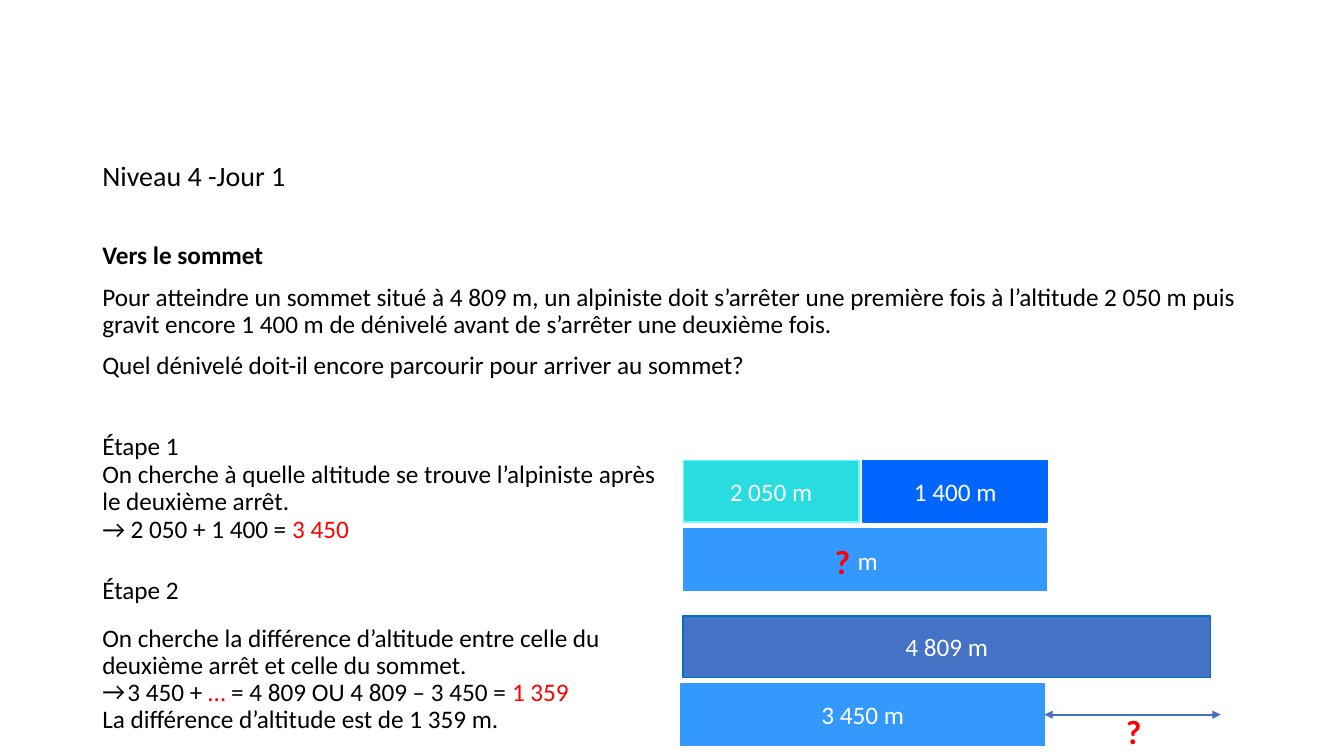
from lxml import etree
from pptx import Presentation
from pptx.dml.color import RGBColor
from pptx.enum.shapes import MSO_CONNECTOR as Connector, MSO_SHAPE as Shape
from pptx.enum.text import MSO_ANCHOR as Anchor, PP_ALIGN as Align
from pptx.oxml.ns import qn
from pptx.util import Pt

COLORS = {
    "black": "000000", "white": "FFFFFF", "red": "FF0000",
    "turquoise": "28DCE0", "aqua": "66FFFF", "royal": "0066FF",
    "sky": "3399FF", "slate": "4472C4", "ocean": "0070C0",
}


def color(name):
    return RGBColor.from_string(COLORS[name])


def add_run(paragraph, text, size=18, ink="black", bold=False):
    run = paragraph.add_run()
    run.text = text
    run.font.name = "Calibri"
    run.font.size = Pt(size)
    run.font.bold = bold
    run.font.color.rgb = color(ink)


prs = Presentation()
prs.slide_width, prs.slide_height = Pt(960), Pt(540)
slide = prs.slides.add_slide(prs.slide_layouts[6])

# Problem and solution: (space before, size, bold, runs)
STEP_GAP = 58.5  # leaves room for a step heading
problem = [
    (0, 20, False, [("Niveau 4 -Jour 1", "black")]),
    (36, 18, True, [("Vers le sommet", "black")]),
    (10, 18, False, [("Pour atteindre un sommet situé à 4 809 m, un alpiniste doit "
                      "s’arrêter une première fois à l’altitude 2 050 m puis gravit "
                      "encore 1 400 m de dénivelé avant de s’arrêter une deuxième "
                      "fois.", "black")]),
    (10, 18, False, [("Quel dénivelé doit-il encore parcourir pour arriver au "
                      "sommet?", "black")]),
    (STEP_GAP, 18, False, [("On cherche à quelle altitude se trouve l’alpiniste "
                            "après", "black")]),
    (0, 18, False, [("le deuxième arrêt.", "black")]),
    (0, 18, False, [("→ 2 050 + 1 400 = ", "black"), ("3 450", "red")]),
    (STEP_GAP, 18, False, [("On cherche la différence d’altitude entre celle du",
                            "black")]),
    (0, 18, False, [("deuxième arrêt et celle du sommet.", "black")]),
    (0, 18, False, [("3 450 + ", "black"), ("…", "red"),
                    (" = 4 809 OU 4 809 – 3 450 = ", "black"), ("1 359", "red")]),
    (0, 18, False, [("La différence d’altitude est de 1 359 m.", "black")]),
]
statement = slide.shapes.add_textbox(Pt(66), Pt(112.5), Pt(828), Pt(427.5)).text_frame
statement.word_wrap = True
for index, (before, size, bold, runs) in enumerate(problem):
    line = statement.paragraphs[0] if index == 0 else statement.add_paragraph()
    line.line_spacing = 0.9
    line.space_before = Pt(before)
    for text, ink in runs:
        add_run(line, text, size, ink, bold)

# Arrow bullet on the second calculation
calculation = statement.paragraphs[9]._p.get_or_add_pPr()
calculation.set("marL", str(Pt(18)))
calculation.set("indent", str(-Pt(18)))
etree.SubElement(calculation, qn("a:buFont"), typeface="Calibri")
etree.SubElement(calculation, qn("a:buChar"), char="→")

# Bar model: left, top, width, fill, outline, value
bars = [
    (488, 329, 125.5, "turquoise", "aqua", "2 050 m"),
    (616.5, 329, 131.5, "royal", "royal", "1 400 m"),
    (488, 378, 259.5, "sky", "sky", " m"),
    (488, 440, 376.5, "slate", "ocean", "4 809 m"),
    (486.5, 488.5, 259.5, "sky", "sky", "3 450 m"),
]
for left, top, width, fill, outline, value in bars:
    bar = slide.shapes.add_shape(Shape.RECTANGLE, Pt(left), Pt(top), Pt(width), Pt(44))
    bar.shadow.inherit = False
    bar.fill.solid()
    bar.fill.fore_color.rgb = color(fill)
    bar.line.color.rgb = color(outline)
    bar.line.width = Pt(1)
    bar.text_frame.vertical_anchor = Anchor.MIDDLE
    bar.text_frame.paragraphs[0].alignment = Align.CENTER
    add_run(bar.text_frame.paragraphs[0], value, ink="white")

# Double arrow from the last bar to the summit
remaining = slide.shapes.add_connector(
    Connector.STRAIGHT, Pt(746), Pt(510.5), Pt(872), Pt(510.5))
remaining.begin_connect(bar, 3)
remaining.line.color.rgb = color("slate")
remaining.line.width = Pt(1.5)
stroke = remaining.line._get_or_add_ln()
for end in ("a:headEnd", "a:tailEnd"):
    etree.SubElement(stroke, qn(end), type="triangle")
etree.SubElement(remaining._element.spPr, qn("a:effectLst"))

# Step headings and unknowns: left, top, width, height, text, size, ink, bold, alignment
labels = [
    (66, 304, 93.5, 29, "Étape 1", 18, "black", False, Align.LEFT),
    (66, 407, 93.5, 29, "Étape 2", 18, "black", False, Align.LEFT),
    (585.5, 382.5, 32.5, 36, "?", 24, "red", True, Align.CENTER),
    (793.5, 504.5, 32.5, 36, "?", 24, "red", True, Align.CENTER),
]
for left, top, width, height, text, size, ink, bold, alignment in labels:
    label = slide.shapes.add_textbox(Pt(left), Pt(top), Pt(width), Pt(height)).text_frame
    label.word_wrap = True
    label.paragraphs[0].alignment = alignment
    add_run(label.paragraphs[0], text, size, ink, bold)

prs.save("out.pptx")
